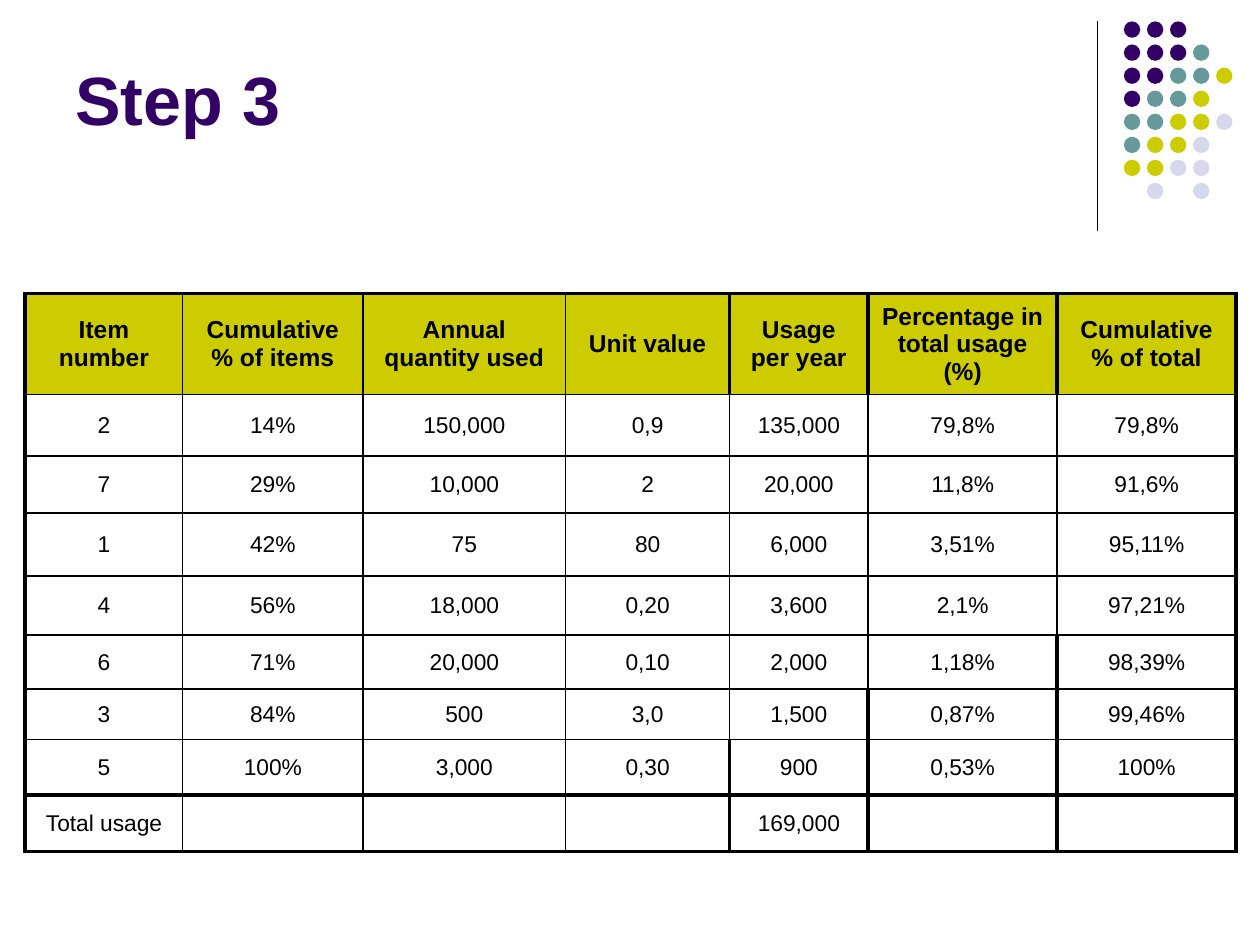
from lxml import etree
from pptx import Presentation
from pptx import util as u
from pptx.dml.color import RGBColor
from pptx.enum import shapes, text
from pptx.oxml import ns

COLORS = {"violet": "330066", "teal": "669999", "lime": "CCCC00",
          "mist": "D8D8EC", "ink": "000000"}

deck = Presentation()
deck.slide_width, deck.slide_height = u.Inches(10), u.Inches(7.5)
page = deck.slides.add_slide(deck.slide_layouts[6])


def across(percent):
    return round(deck.slide_width * percent / 100)


def down(percent):
    return round(deck.slide_height * percent / 100)


rule = page.shapes.add_connector(
    shapes.MSO_CONNECTOR.STRAIGHT, across(87.1), down(2.27), across(87.1), down(24.4))
rule.line.color.rgb = RGBColor.from_string(COLORS["ink"])
rule.line.width = u.Pt(0.75)
etree.SubElement(rule._element.spPr, ns.qn("a:effectLst"))

dot_rows = ["VVV", "VVVT", "VVTTL", "VTTL", "TTLLM", "TLLM", "LLMM", " M M"]
dot_colors = {"V": "violet", "T": "teal", "L": "lime", "M": "mist"}
for row, letters in enumerate(dot_rows):
    for column, letter in enumerate(letters):
        if letter == " ":
            continue
        dot = page.shapes.add_shape(
            shapes.MSO_SHAPE.OVAL, across(89.2 + 1.83 * column),
            down(2.27 + 2.44 * row), across(1.3), across(1.3))
        dot.shadow.inherit = False
        dot.fill.solid()
        dot.fill.fore_color.rgb = RGBColor.from_string(COLORS[dot_colors[letter]])
        dot.line.fill.background()

title = page.shapes.add_textbox(across(5), down(1.73), across(82.5), down(13.6))
title.text_frame.word_wrap = True
title.text_frame.vertical_anchor = text.MSO_ANCHOR.BOTTOM
span = title.text_frame.paragraphs[0].add_run()
span.text = "Step 3"
title_format = {"name": "Arial", "size": u.Pt(39), "bold": True}
for name, value in title_format.items():
    setattr(span.font, name, value)
span.font.color.rgb = RGBColor.from_string(COLORS["violet"])

usage = [
    ["Item number", "Cumulative % of items", "Annual quantity used", "Unit value",
     "Usage per year", "Percentage in total usage (%)", "Cumulative % of total"],
    ["2", "14%", "150,000", "0,9", "135,000", "79,8%", "79,8%"],
    ["7", "29%", "10,000", "2", "20,000", "11,8%", "91,6%"],
    ["1", "42%", "75", "80", "6,000", "3,51%", "95,11%"],
    ["4", "56%", "18,000", "0,20", "3,600", "2,1%", "97,21%"],
    ["6", "71%", "20,000", "0,10", "2,000", "1,18%", "98,39%"],
    ["3", "84%", "500", "3,0", "1,500", "0,87%", "99,46%"],
    ["5", "100%", "3,000", "0,30", "900", "0,53%", "100%"],
    ["Total usage", "", "", "", "169,000", "", ""],
]
widths = [12.5, 14.3, 16.1, 13, 11, 15, 14.2]
heights = [10.67, 6.53, 6, 6.67, 6.27, 5.73, 5.33, 5.87, 6]
first_heavy_edge = [4, 7, 7, 7, 7, 6, 5, 4, 4]
heavy_levels = {0, 8, 9}

table = page.shapes.add_table(
    len(heights), len(widths), across(2), down(31.07),
    across(sum(widths)), down(sum(heights))).table
for column, width in zip(table.columns, widths):
    column.width = across(width)
for line, height in zip(table.rows, heights):
    line.height = down(height)

for row, values in enumerate(usage):
    header = row == 0
    cell_format = {"name": "Arial", "size": u.Pt(14 if header else 13), "bold": header}
    for column, value in enumerate(values):
        cell = table.cell(row, column)
        cell.vertical_anchor = text.MSO_ANCHOR.MIDDLE
        heavy = {
            "lnL": column == 0 or column >= first_heavy_edge[row],
            "lnR": column + 1 >= first_heavy_edge[row],
            "lnT": row in heavy_levels,
            "lnB": row + 1 in heavy_levels,
        }
        properties = cell._tc.get_or_add_tcPr()
        for side, is_heavy in heavy.items():
            border = etree.SubElement(properties, ns.qn(f"a:{side}"),
                                      w=str(u.Pt(2.25 if is_heavy else 1)))
            fill = etree.SubElement(border, ns.qn("a:solidFill"))
            etree.SubElement(fill, ns.qn("a:srgbClr"), val=COLORS["ink"])
        if header:
            cell.fill.solid()
            cell.fill.fore_color.rgb = RGBColor.from_string(COLORS["lime"])
        else:
            cell.fill.background()
        para = cell.text_frame.paragraphs[0]
        para.alignment = text.PP_ALIGN.CENTER
        if value:
            span = para.add_run()
            span.text = value
            for name, setting in cell_format.items():
                setattr(span.font, name, setting)
            span.font.color.rgb = RGBColor.from_string(COLORS["ink"])

deck.save("out.pptx")
